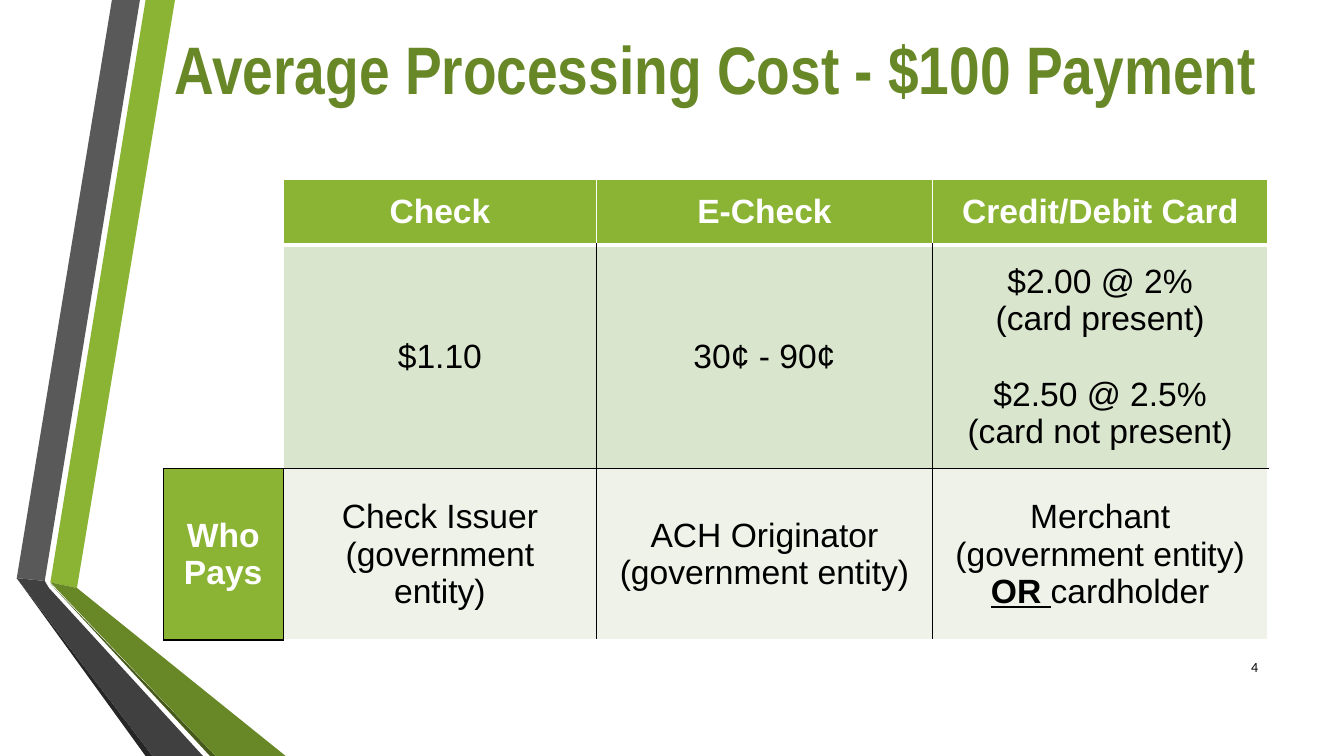
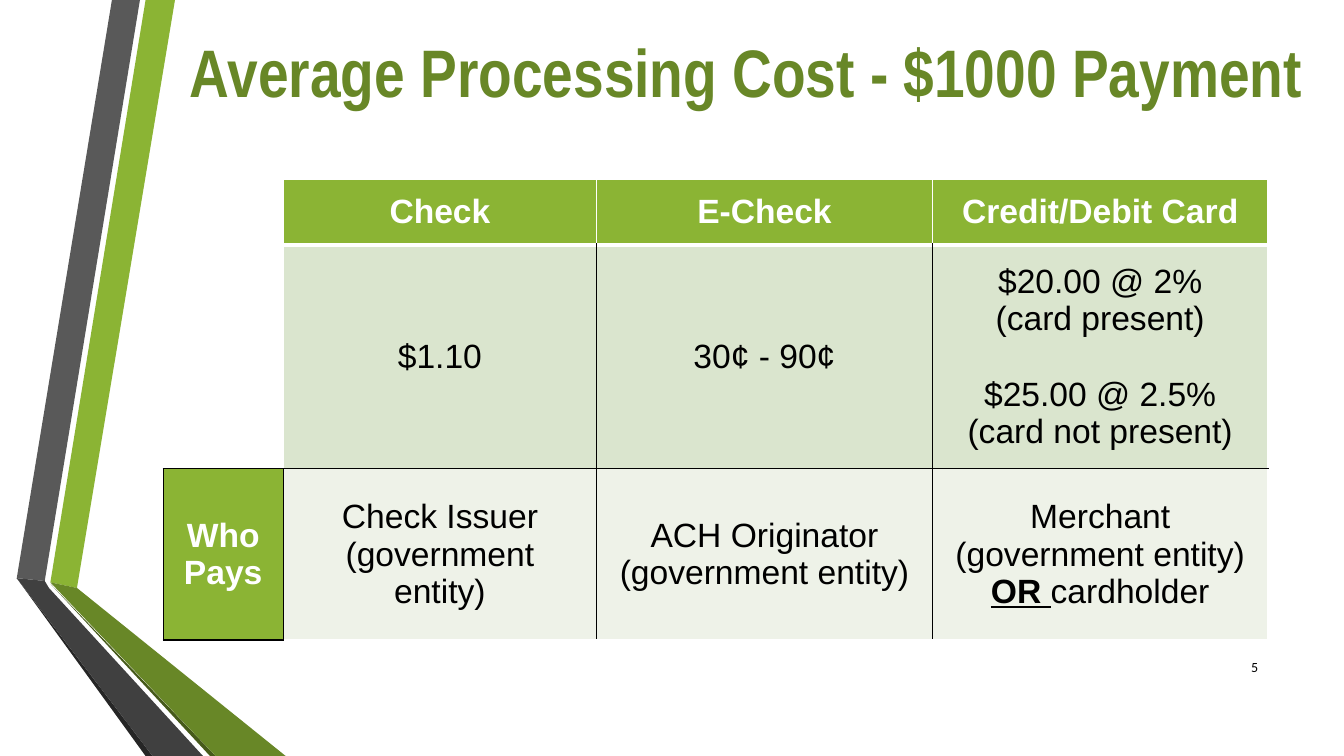
from lxml import etree
from pptx import Presentation
from pptx.dml.color import RGBColor
from pptx.enum.text import MSO_ANCHOR, MSO_AUTO_SIZE, PP_ALIGN
from pptx.oxml.ns import qn
from pptx.util import Pt

CENTER, RIGHT = PP_ALIGN.CENTER, PP_ALIGN.RIGHT
MIDDLE, NO_FIT = MSO_ANCHOR.MIDDLE, MSO_AUTO_SIZE.NONE

GREEN, DARK_GREEN, WHITE, BLACK = "8BB434", "688727", "FFFFFF", "000000"
ROW_TINTS = [GREEN, "DAE5CE", "EEF2E8"]

RIBBONS = [
    (GREEN, [(36, 416.2), (55.4, 419.8), (124.6, 0), (104.4, 0)]),
    ("595959", [(100.1, 0), (79.9, 0), (11.5, 412.6), (31.7, 415.4)]),
    ("262626", [(11.5, 412.6), (104.4, 540), (108.7, 540)]),
    ("465A1A", [(36, 416.9), (149.8, 540), (154.1, 540)]),
    (DARK_GREEN, [(36, 416.2), (154.1, 540), (203.8, 540), (55.4, 419.8)]),
    ("404040", [(11.5, 412.6), (108.7, 540), (145.4, 540), (34.6, 419.8), (31.7, 415.4)]),
]

SLIDES = [
    {"title": "Average Processing Cost - $100 Payment", "title_box": (116.6, 4.3, 789.1, 87.8),
     "card_costs": ["$2.00 @ 2%\v(card present)", "$2.50 @ 2.5%\v(card not present)"], "number": "4"},
    {"title": "Average Processing Cost - $1000 Payment", "title_box": (116.6, 8.6, 833, 83.5),
     "card_costs": ["$20.00 @ 2%\v(card present)", "$25.00 @ 2.5%\v(card not present)"], "number": "5"},
]
HEADERS = [[], ["Check"], ["E-Check"], ["Credit/Debit Card"]]
COSTS = [[], ["$1.10"], ["30¢ - 90¢"]]
PAYERS = [
    ["Who", "Pays"],
    ["Check Issuer", "(government\ventity)"],
    ["ACH Originator", "(government entity)"],
    ["Merchant\v(government entity)\v"],
]

TABLE_LEFT, TABLE_TOP = 116.6, 128.2
COL_WIDTHS = [85.7, 223.9, 239.8, 239.8]
ROW_HEIGHTS = [46.8, 159.8, 122.4]
COST_GAP = 27
NUMBER_BOX = (862.6, 462.2, 43.2, 28.8)

VERTICAL_EDGES = [
    [WHITE] * 5,
    [WHITE, WHITE, BLACK, BLACK, WHITE],
    [BLACK, BLACK, BLACK, BLACK, WHITE],
]
HORIZONTAL_EDGES = [
    [WHITE] * 4,
    [WHITE] * 4,
    [BLACK] * 4,
    [BLACK, WHITE, WHITE, WHITE],
]
EDGE_WEIGHTS = [1, 3, 1, 1]


def rgb(color):
    return RGBColor.from_string(color)


def style(p, font, size, color, bold=False, align=CENTER):
    p.alignment = align
    p.font.name, p.font.size, p.font.bold = font, Pt(size), bold
    p.font.color.rgb = rgb(color)


def place(shape, box):
    shape.left, shape.top, shape.width, shape.height = map(Pt, box)


def add_ribbons(s, layout):
    for i, (color, points) in enumerate(RIBBONS):
        builder = s.shapes.build_freeform(*points[0], scale=Pt(1))
        builder.add_line_segments(points[1:], close=True)
        ribbon = builder.convert_to_shape()
        ribbon.shadow.inherit = False
        ribbon.fill.solid()
        ribbon.fill.fore_color.rgb = rgb(color)
        ribbon.line.fill.background()
        ribbon.element.nvSpPr.cNvPr.id = 100 + i
        layout.shapes.element.insert(2 + i, ribbon.element)


def set_borders(cell, row, col):
    edges = [
        ("a:lnL", VERTICAL_EDGES[row][col], 1),
        ("a:lnR", VERTICAL_EDGES[row][col + 1], 1),
        ("a:lnT", HORIZONTAL_EDGES[row][col], EDGE_WEIGHTS[row]),
        ("a:lnB", HORIZONTAL_EDGES[row + 1][col], EDGE_WEIGHTS[row + 1]),
    ]
    tc_pr = cell._tc.get_or_add_tcPr()
    for i, (tag, color, weight) in enumerate(edges):
        ln = etree.Element(qn(tag), w=str(Pt(weight)))
        fill = etree.SubElement(ln, qn("a:solidFill"))
        etree.SubElement(fill, qn("a:srgbClr"), val=color)
        tc_pr.insert(i, ln)


def fill_cell(cell, row, col, paragraphs):
    is_heading = row == 0 or col == 0
    cell.vertical_anchor = MIDDLE
    if paragraphs:
        cell.fill.solid()
        cell.fill.fore_color.rgb = rgb(GREEN if is_heading else ROW_TINTS[row])
    else:
        cell.fill.background()
    set_borders(cell, row, col)
    tf = cell.text_frame
    for i, text in enumerate(paragraphs):
        p = tf.add_paragraph() if i else tf.paragraphs[0]
        p.text = text
        style(p, "Arial", 24, WHITE if is_heading else BLACK, is_heading)
        if i and row == 1:
            p.space_before = Pt(COST_GAP)


def add_cost_table(s, card_costs):
    rows = [HEADERS, COSTS + [card_costs], PAYERS]
    frame = s.shapes.add_table(len(rows), len(COL_WIDTHS), Pt(TABLE_LEFT), Pt(TABLE_TOP),
                               Pt(sum(COL_WIDTHS)), Pt(sum(ROW_HEIGHTS)))
    table = frame.table
    table.first_row = table.horz_banding = False
    for column, width in zip(table.columns, COL_WIDTHS):
        column.width = Pt(width)
    for row, cells in enumerate(rows):
        table.rows[row].height = Pt(ROW_HEIGHTS[row])
        for col, paragraphs in enumerate(cells):
            fill_cell(table.cell(row, col), row, col, paragraphs)
    p = table.cell(2, 3).text_frame.paragraphs[0]
    r = p.add_run()
    r.text = "OR "
    r.font.bold = r.font.underline = True
    p.add_run().text = "cardholder"


def add_slide(prs, layout, content):
    s = prs.slides.add_slide(layout)
    title = s.shapes.title
    place(title, content["title_box"])
    tf = title.text_frame
    tf.text = content["title"]
    tf.auto_size, tf.vertical_anchor = NO_FIT, MIDDLE
    style(tf.paragraphs[0], "Arial Narrow", 48, DARK_GREEN, True)
    add_cost_table(s, content["card_costs"])
    tf = s.shapes.add_textbox(*map(Pt, NUMBER_BOX)).text_frame
    tf.text = content["number"]
    tf.word_wrap, tf.vertical_anchor = True, MIDDLE
    style(tf.paragraphs[0], "Calibri", 10, BLACK, align=RIGHT)
    return s


def main():
    prs = Presentation()
    prs.slide_width, prs.slide_height = Pt(960), Pt(540)
    layout = prs.slide_layouts[5]
    slides = [add_slide(prs, layout, content) for content in SLIDES]
    add_ribbons(slides[0], layout)
    prs.save("out.pptx")


if __name__ == "__main__":
    main()
